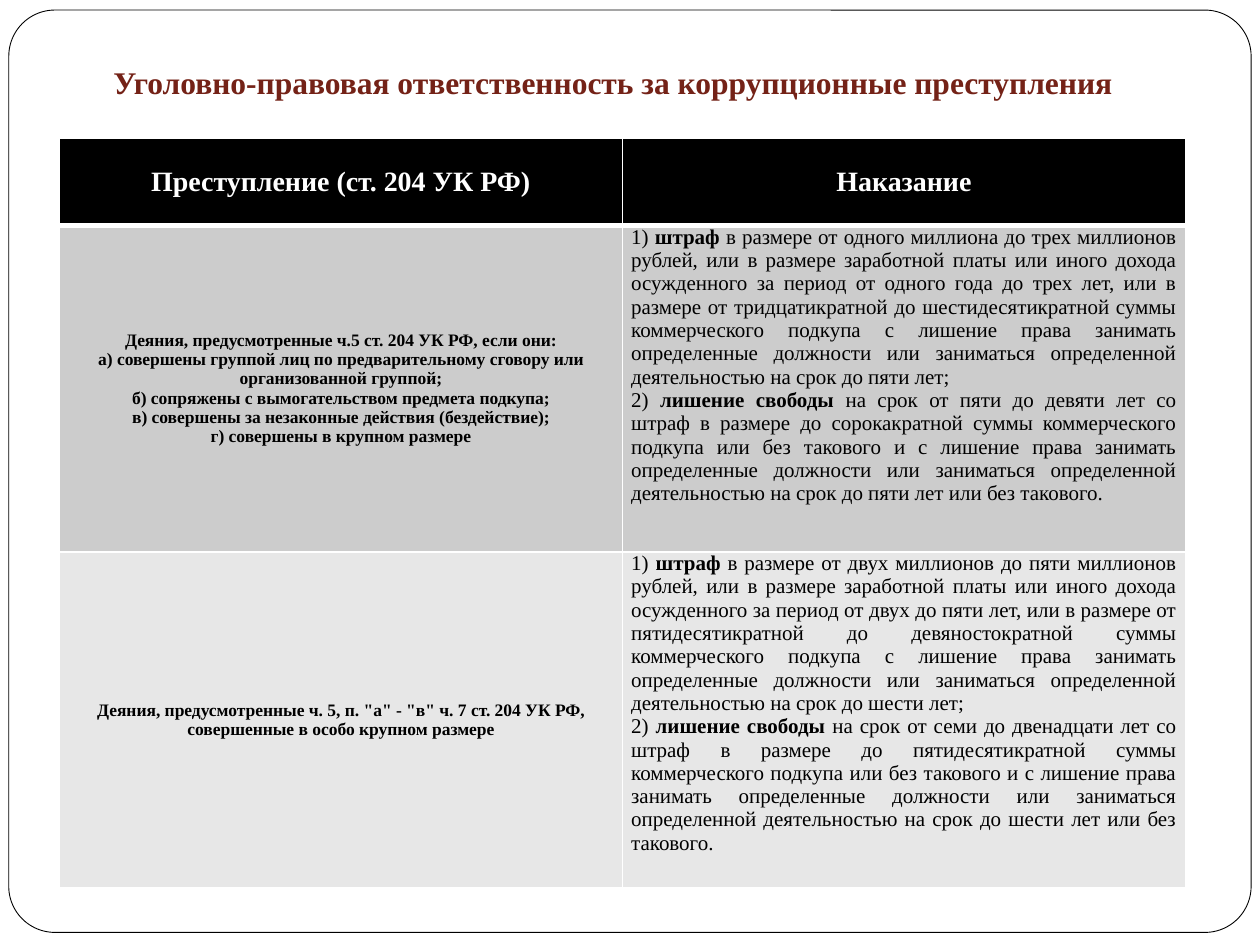
from lxml import etree
from pptx import Presentation
from pptx.dml.color import RGBColor
from pptx.enum.shapes import MSO_SHAPE
from pptx.enum.text import MSO_ANCHOR, PP_ALIGN
from pptx.oxml.ns import qn
from pptx.util import Inches, Pt

ROUNDED = MSO_SHAPE.ROUNDED_RECTANGLE
TOP, MIDDLE, BOTTOM = MSO_ANCHOR.TOP, MSO_ANCHOR.MIDDLE, MSO_ANCHOR.BOTTOM
CENTER, JUSTIFY = PP_ALIGN.CENTER, PP_ALIGN.JUSTIFY

FONT = "Times New Roman"
COLORS = {
    "paper": "FFFFFF",
    "ink": "000000",
    "title": "742217",
    "header": "000000",
    "bands": ("CCCCCC", "E7E7E7"),
}

TITLE = "Уголовно-правовая ответственность за коррупционные преступления"
HEADERS = ("Преступление (ст. 204 УК РФ)", "Наказание")
OFFENCES = [
    {
        "crime": [
            "Деяния, предусмотренные ч.5 ст. 204 УК РФ, если они:",
            "а) совершены группой лиц по предварительному сговору или организованной группой;",
            "б) сопряжены с вымогательством предмета подкупа;",
            "в) совершены за незаконные действия (бездействие);",
            "г) совершены в крупном размере",
        ],
        "penalties": [
            ("1) ", "штраф",
             " в размере от одного миллиона до трех миллионов рублей, или в размере "
             "заработной платы или иного дохода осужденного за период от одного года до "
             "трех лет, или в размере от тридцатикратной до шестидесятикратной суммы "
             "коммерческого подкупа с лишение права занимать определенные должности или "
             "заниматься определенной деятельностью на срок до пяти лет;"),
            ("2) ", "лишение свободы ",
             "на срок от пяти до девяти лет со штраф в размере до сорокакратной суммы "
             "коммерческого подкупа или без такового и с лишение права занимать "
             "определенные должности или заниматься определенной деятельностью на срок "
             "до пяти лет или без такового."),
        ],
    },
    {
        "crime": [
            "Деяния, предусмотренные ч. 5, п. \"а\" - \"в\" ч. 7 ст. 204 УК РФ, "
            "совершенные в особо крупном размере",
        ],
        "penalties": [
            ("1) ", "штраф",
             " в размере от двух миллионов до пяти миллионов рублей, или в размере "
             "заработной платы или иного дохода осужденного за период от двух до пяти "
             "лет, или в размере от пятидесятикратной до девяностократной суммы "
             "коммерческого подкупа с лишение права занимать определенные должности или "
             "заниматься определенной деятельностью на срок до шести лет;"),
            ("2) ", "лишение свободы ",
             "на срок от семи до двенадцати лет со штраф в размере до "
             "пятидесятикратной суммы коммерческого подкупа или без такового и с лишение "
             "права занимать определенные должности или заниматься определенной "
             "деятельностью на срок до шести лет или без такового."),
        ],
    },
]
ROW_HEIGHTS = (0.69, 2.59, 2.67)
COLUMN_WIDTH = 4.47


def rgb(value):
    return RGBColor.from_string(value)


def write(frame, paragraphs, align, size, color):
    for index, runs in enumerate(paragraphs):
        paragraph = frame.paragraphs[0] if index == 0 else frame.add_paragraph()
        paragraph.alignment = align
        for text, bold in runs:
            run = paragraph.add_run()
            run.text = text
            run.font.name = FONT
            run.font.size = Pt(size)
            run.font.bold = bold
            run.font.color.rgb = rgb(color)


def set_borders(cell, bottom=1, top=1):
    properties = cell._tc.get_or_add_tcPr()
    widths = {"a:lnL": 1, "a:lnR": 1, "a:lnT": top, "a:lnB": bottom}
    for index, (tag, width) in enumerate(widths.items()):
        line = etree.Element(qn(tag), w=str(Pt(width)))
        fill = etree.SubElement(line, qn("a:solidFill"))
        etree.SubElement(fill, qn("a:srgbClr"), val=COLORS["paper"])
        properties.insert(index, line)


def fill_cell(cell, color, anchor):
    cell.fill.solid()
    cell.fill.fore_color.rgb = rgb(color)
    cell.vertical_anchor = anchor


def add_frame(slide):
    frame = slide.shapes.add_shape(
        ROUNDED, Inches(0.07), Inches(0.08), Inches(9.86), Inches(7.32))
    frame.adjustments[0] = 0.05
    frame.shadow.inherit = False
    frame.fill.solid()
    frame.fill.fore_color.rgb = rgb(COLORS["paper"])
    frame.line.color.rgb = rgb(COLORS["ink"])
    frame.line.width = Pt(0.5)


def add_penalty_table(slide):
    table = slide.shapes.add_table(
        len(ROW_HEIGHTS), len(HEADERS), Inches(0.47), Inches(1.1),
        Inches(COLUMN_WIDTH * len(HEADERS)), Inches(sum(ROW_HEIGHTS))).table
    for column in table.columns:
        column.width = Inches(COLUMN_WIDTH)
    for row, height in zip(table.rows, ROW_HEIGHTS):
        row.height = Inches(height)

    for column, header in enumerate(HEADERS):
        cell = table.cell(0, column)
        fill_cell(cell, COLORS["header"], MIDDLE)
        set_borders(cell, bottom=3)
        write(cell.text_frame, [[(header, True)]], CENTER, 16, COLORS["paper"])

    for row, (offence, band) in enumerate(zip(OFFENCES, COLORS["bands"]), 1):
        crime = [[(line, True)] for line in offence["crime"]]
        penalties = [[(number, False), (name, True), (terms, False)]
                     for number, name, terms in offence["penalties"]]
        columns = ((crime, CENTER, 10, MIDDLE), (penalties, JUSTIFY, 12, TOP))
        for column, (paragraphs, align, size, anchor) in enumerate(columns):
            cell = table.cell(row, column)
            fill_cell(cell, band, anchor)
            cell.margin_left = cell.margin_right = Inches(0.07)
            cell.margin_top = cell.margin_bottom = 0
            set_borders(cell, top=3 if row == 1 else 1)
            write(cell.text_frame, paragraphs, align, size, COLORS["ink"])


def add_title(slide):
    frame = slide.shapes.add_textbox(
        Inches(0.39), Inches(0.39), Inches(8.95), Inches(0.51)).text_frame
    frame.word_wrap = True
    frame.vertical_anchor = BOTTOM
    frame.margin_bottom = Inches(0.1)
    write(frame, [[(TITLE, True)]], CENTER, 18, COLORS["title"])


def main():
    presentation = Presentation()
    presentation.slide_width = Inches(10)
    presentation.slide_height = Inches(7.5)
    slide = presentation.slides.add_slide(presentation.slide_layouts[6])
    add_frame(slide)
    add_penalty_table(slide)
    add_title(slide)
    presentation.save("out.pptx")


if __name__ == "__main__":
    main()
